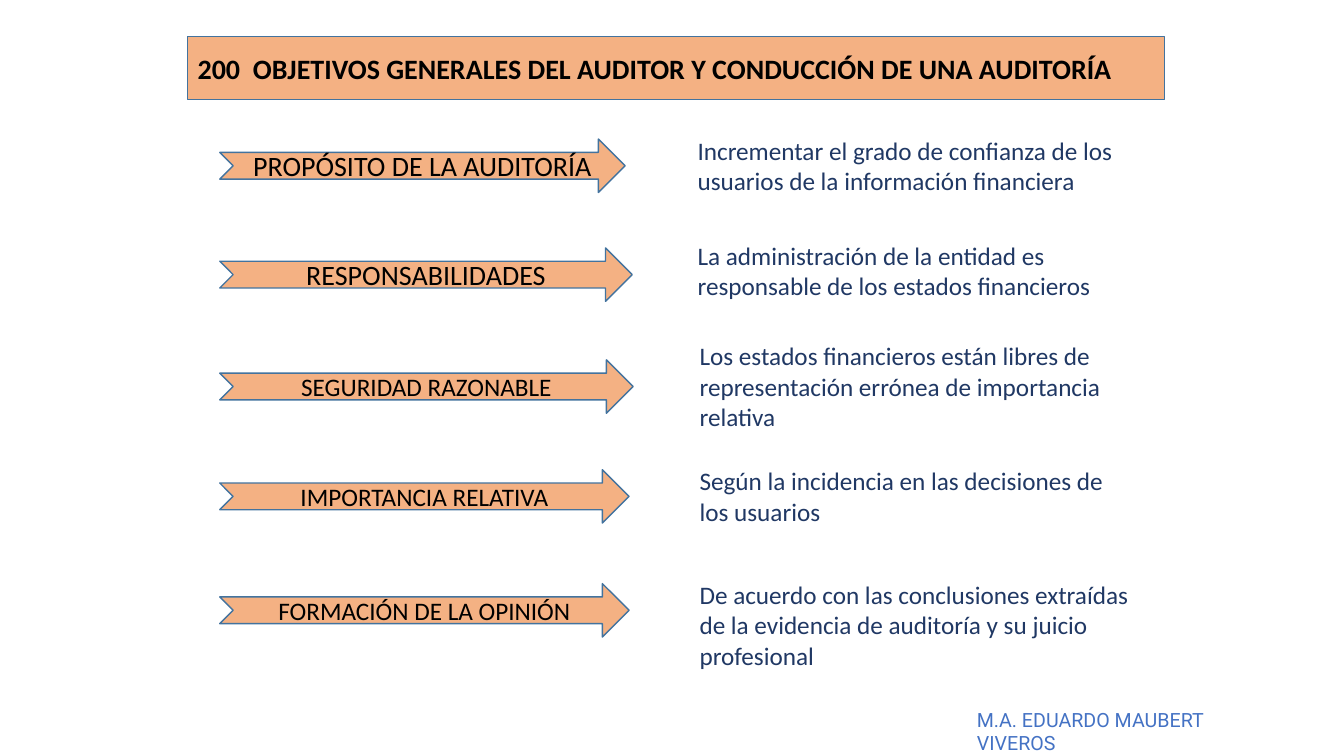
"""Build the slide on the auditor's general objectives."""
from lxml.etree import SubElement
from pptx import Presentation
from pptx.dml.color import RGBColor
from pptx.enum.shapes import MSO_SHAPE
from pptx.enum.text import MSO_ANCHOR, MSO_AUTO_SIZE, PP_ALIGN
from pptx.oxml.ns import qn
from pptx.util import Emu, Pt

PX = 9144
PEACH = RGBColor(0xF4, 0xB1, 0x83)
EDGE = RGBColor(0x43, 0x73, 0x9E)
BLACK = RGBColor(0, 0, 0)
NAVY = RGBColor(0x20, 0x38, 0x64)
BLUE = RGBColor(0x44, 0x72, 0xC4)

LEFT = 218
TALL = 53
ROWS = [
    (138, 402, 20, "PROPÓSITO DE LA AUDITORÍA", (682, 129, 472, 71),
     "Incrementar el grado de confianza de los usuarios de la información financiera"),
    (246, 409, 20, "RESPONSABILIDADES", (682, 233, 472, 71),
     "La administración de la entidad es responsable de los estados financieros"),
    (357, 410, 18, "SEGURIDAD RAZONABLE", (684, 333, 449, 101),
     "Los estados financieros están libres de representación errónea de importancia relativa"),
    (466, 406, 18, "IMPORTANCIA RELATIVA", (684, 457, 423, 71),
     "Según la incidencia en las decisiones de los usuarios"),
    (579, 406, 18, "FORMACIÓN DE LA OPINIÓN", (684, 570, 463, 101),
     "De acuerdo con las conclusiones extraídas de la evidencia de auditoría y su juicio profesional"),
]


def write(shape, text, size, color, align=PP_ALIGN.LEFT, anchor=MSO_ANCHOR.TOP,
          face="Calibri", bold=False, fit=MSO_AUTO_SIZE.NONE):
    frame = shape.text_frame
    frame.text = text
    for name, value in {"word_wrap": True, "auto_size": fit,
                        "vertical_anchor": anchor}.items():
        setattr(frame, name, value)
    para = frame.paragraphs[0]
    para.alignment = align
    font = para.runs[0].font
    for name, value in {"name": face, "size": Pt(size), "bold": bold}.items():
        setattr(font, name, value)
    font.color.rgb = color


def paint(shape):
    shape.fill.solid()
    shape.fill.fore_color.rgb = PEACH
    shape.line.color.rgb = EDGE
    shape.line.width = Pt(1)


deck = Presentation()
deck.slide_width, deck.slide_height = Emu(1333 * PX), Emu(750 * PX)
slide = deck.slides.add_slide(deck.slide_layouts[5])
shapes = slide.shapes

title = shapes.title
place = {"left": 186, "top": 36, "width": 969, "height": 63}
for name, value in place.items():
    setattr(title, name, Emu(value * PX))
shell = SubElement(title.element.spPr, qn("a:prstGeom"), prst="roundRect")
SubElement(shell, qn("a:avLst"))
paint(title)
write(title, "200  OBJETIVOS GENERALES DEL AUDITOR Y CONDUCCIÓN DE UNA AUDITORÍA",
      20, BLACK, anchor=MSO_ANCHOR.MIDDLE, bold=True)

for top, width, size, label, box, detail in ROWS:
    arrow = shapes.add_shape(MSO_SHAPE.NOTCHED_RIGHT_ARROW,
                             *(Emu(n * PX) for n in (LEFT, top, width, TALL)))
    arrow.shadow.inherit = False
    paint(arrow)
    write(arrow, label, size, BLACK, PP_ALIGN.CENTER, MSO_ANCHOR.MIDDLE)
    note = shapes.add_textbox(*(Emu(n * PX) for n in box))
    write(note, detail, 18, NAVY, fit=MSO_AUTO_SIZE.SHAPE_TO_FIT_TEXT)

author = shapes.add_textbox(*(Emu(n * PX) for n in (959, 697, 316, 34)))
write(author, "M.A. EDUARDO MAUBERT VIVEROS", 14, BLUE, face="Roboto",
      fit=MSO_AUTO_SIZE.SHAPE_TO_FIT_TEXT)

deck.save("out.pptx")
